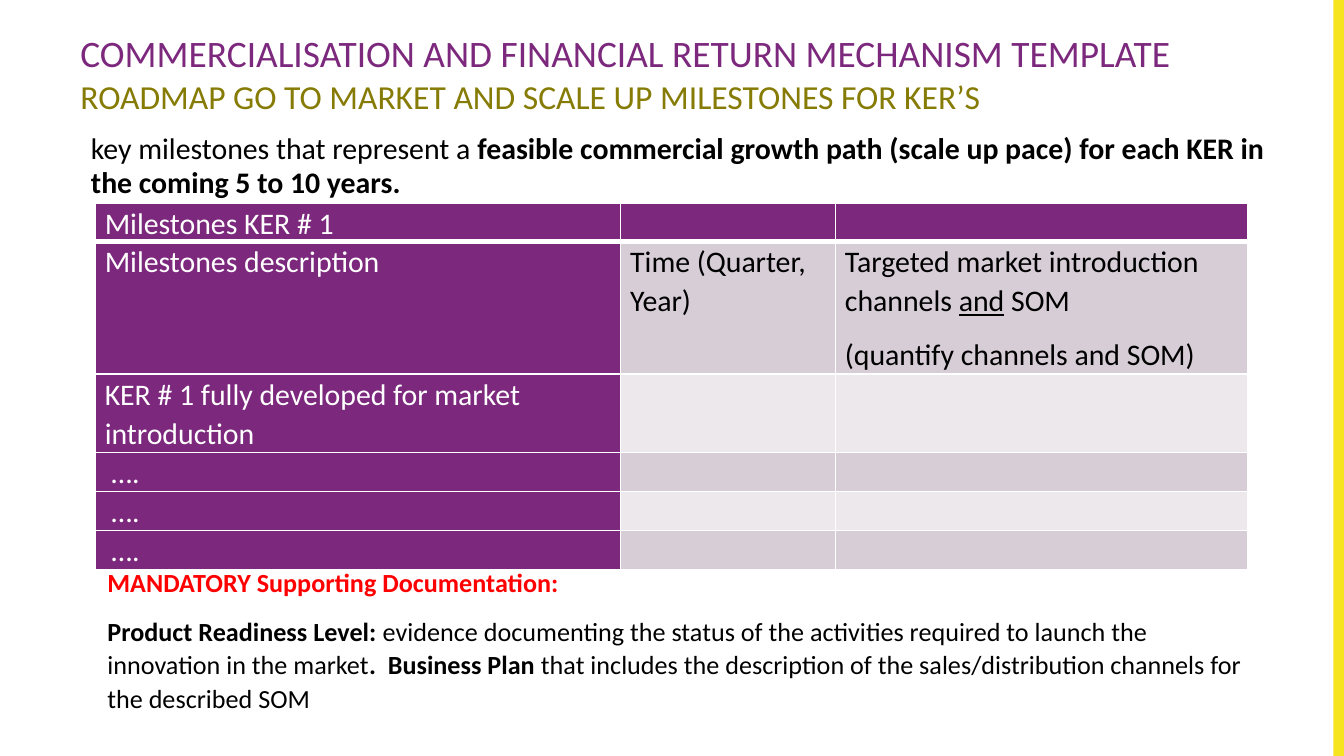
from lxml.etree import SubElement
from pptx import Presentation
from pptx.dml.color import RGBColor
from pptx.enum.shapes import MSO_SHAPE
from pptx.oxml.ns import qn
from pptx.util import Cm, Pt

FONT = "Calibri"
PURPLE, OLIVE, YELLOW = "7C287D", "867B05", "F6E421"
BLACK, WHITE, RED = "000000", "FFFFFF", "FF0000"
DARK_BAND, LIGHT_BAND = "D7CDD7", "ECE8EC"

COLUMN_WIDTHS = [9.93, 4.06, 7.8]
ROW_HEIGHTS = [0.73, 2.5, 1.48, 0.74, 0.74, 0.74]
MILESTONES = [
    ["Milestones KER # 1", "", ""],
    ["Milestones description", "Time (Quarter, Year)",
     [[("Targeted market introduction channels ", ""), ("and", "u"), (" SOM", "")],
      [("(quantify channels and SOM)", "")]]],
    ["KER # 1 fully developed for market introduction", "", ""],
] + [["\u00a0….".replace("\u00a0", " "), "", ""]] * 3


def color(hex_code):
    """Turn a hex string into a colour."""
    return RGBColor.from_string(hex_code)


def write_paragraph(paragraph, runs, size, hex_code, spacing=1.0, after=0):
    """Fill a paragraph with (text, style) runs, style being "", "b" or "u"."""
    paragraph.line_spacing = spacing
    paragraph.space_after = Pt(after)
    for text, style in runs:
        run = paragraph.add_run()
        run.text = text
        font = run.font
        font.name, font.size = FONT, Pt(size)
        font.bold, font.underline = style == "b", style == "u"
        font.color.rgb = color(hex_code)


def add_text(slide, left, top, width, height, paragraphs, top_inset=0.13):
    """Add a wrapping text box; each paragraph holds write_paragraph arguments."""
    frame = slide.shapes.add_textbox(Cm(left), Cm(top), Cm(width), Cm(height)).text_frame
    frame.word_wrap = True
    frame.margin_top = Cm(top_inset)
    for index, arguments in enumerate(paragraphs):
        paragraph = frame.add_paragraph() if index else frame.paragraphs[0]
        write_paragraph(paragraph, *arguments)


def add_border(cell, side, width):
    """Draw one white border of a cell."""
    line = SubElement(cell._tc.get_or_add_tcPr(), qn(f"a:ln{side}"), w=str(Pt(width)))
    SubElement(SubElement(line, qn("a:solidFill")), qn("a:srgbClr"), val=WHITE)


def fill_cell(cell, content, row, column):
    """Write, border and colour a table cell according to its place."""
    cell.margin_left = cell.margin_right = Cm(0.18)
    cell.margin_top = cell.margin_bottom = 0
    for side in "LRTB":
        heavy = (row, side) in [(0, "B"), (1, "T")]
        add_border(cell, side, 3 if heavy else 1)
    is_heading = row == 0 or column == 0
    band = DARK_BAND if row % 2 else LIGHT_BAND
    cell.fill.solid()
    cell.fill.fore_color.rgb = color(PURPLE if is_heading else band)
    frame = cell.text_frame
    if not content:
        SubElement(frame.paragraphs[0]._p, qn("a:endParaRPr"), sz="1400")
        return
    paragraphs = [[(content, "")]] if isinstance(content, str) else content
    for index, runs in enumerate(paragraphs):
        paragraph = frame.add_paragraph() if index else frame.paragraphs[0]
        after = 8 if index < len(paragraphs) - 1 else 0
        write_paragraph(paragraph, runs, 16, WHITE if is_heading else BLACK, 1.07, after)


def add_milestones(slide, left, top):
    """Add the milestone table."""
    table = slide.shapes.add_table(
        len(ROW_HEIGHTS), len(COLUMN_WIDTHS), Cm(left), Cm(top),
        Cm(sum(COLUMN_WIDTHS)), Cm(sum(ROW_HEIGHTS))).table
    table.first_row = table.horz_banding = False
    for column, width in zip(table.columns, COLUMN_WIDTHS):
        column.width = Cm(width)
    for row, height in zip(table.rows, ROW_HEIGHTS):
        row.height = Cm(height)
    for row, contents in enumerate(MILESTONES):
        for column, content in enumerate(contents):
            fill_cell(table.cell(row, column), content, row, column)


def add_stripe(slide, left, width, height):
    """Add the coloured stripe along the slide's edge."""
    stripe = slide.shapes.add_shape(MSO_SHAPE.RECTANGLE, Cm(left), 0, Cm(width), Cm(height))
    stripe.shadow.inherit = False
    stripe.fill.solid()
    stripe.fill.fore_color.rgb = color(YELLOW)
    stripe.line.fill.background()


def main():
    """Build the slide and save it."""
    deck = Presentation()
    deck.slide_width, deck.slide_height = Cm(25.4), Cm(14.29)
    slide = deck.slides.add_slide(deck.slide_layouts[6])
    add_stripe(slide, 25.2, 0.2, 14.29)
    add_text(slide, 1.27, 0.58, 23.42, 2.39, [
        ([("COMMERCIALISATION AND FINANCIAL RETURN MECHANISM TEMPLATE", "")], 20, PURPLE),
        ([("ROADMAP GO TO MARKET AND SCALE UP MILESTONES FOR KER’S", "")], 18, OLIVE),
    ], top_inset=0)
    add_text(slide, 1.47, 2.31, 23.44, 8.13, [
        ([("key milestones that represent a ", ""),
          ("feasible commercial growth path (scale up pace) for each KER "
           "in the coming 5 to 10 years.", "b")], 16, BLACK, 0.96),
    ], top_inset=0.18)
    add_milestones(slide, 1.8, 3.84)
    add_text(slide, 1.78, 10.54, 22.38, 3.07, [
        ([("MANDATORY Supporting Documentation:", "b")], 14, RED, 1.07, 8),
        ([("Product Readiness Level: ", "b"),
          ("evidence documenting the status of the activities required to launch "
           "the innovation in the market", ""),
          (".  Business Plan ", "b"),
          ("that includes the description of the sales/distribution channels "
           "for the described SOM", "")], 14, BLACK, 1.07, 8),
    ])
    deck.save("out.pptx")


if __name__ == "__main__":
    main()
